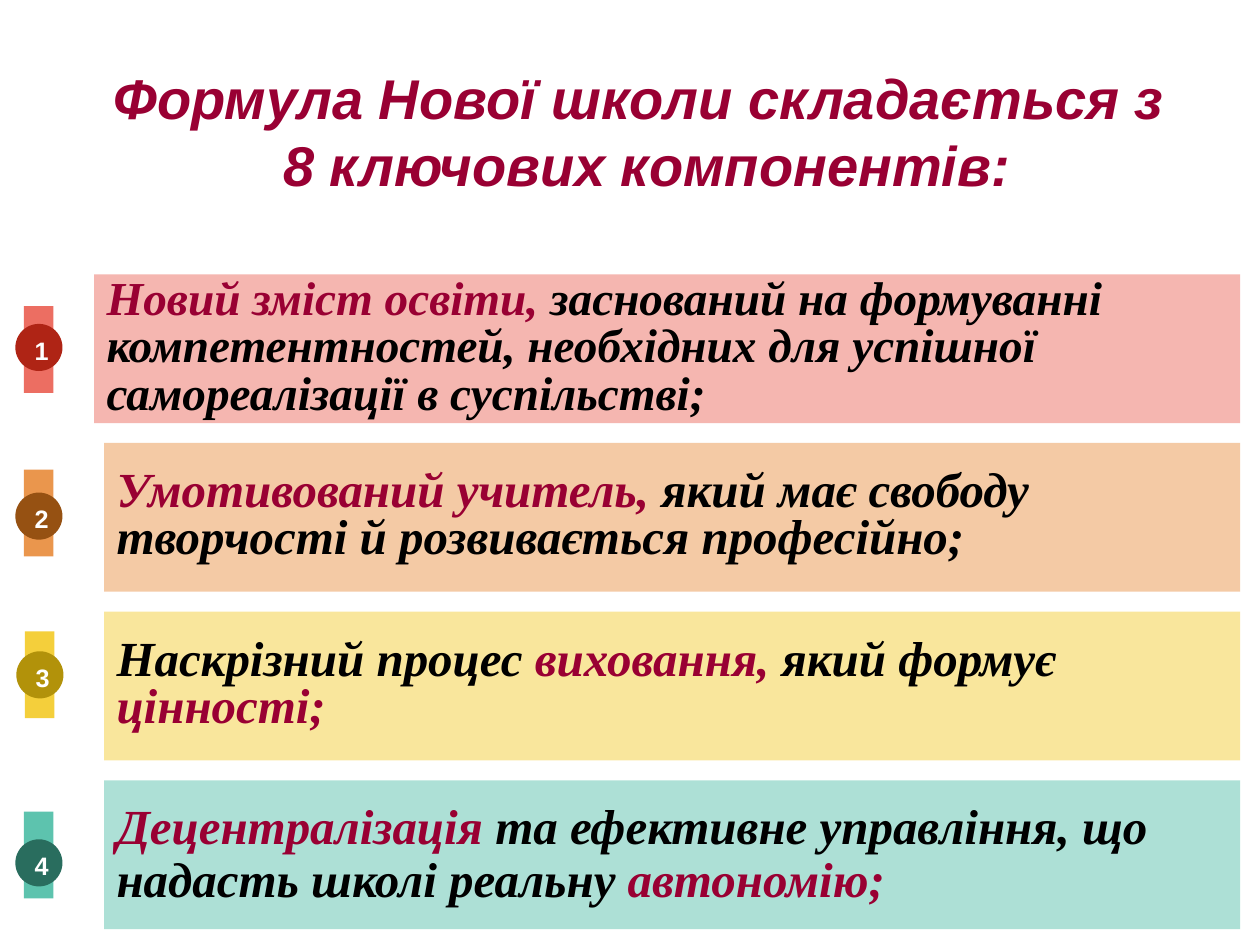
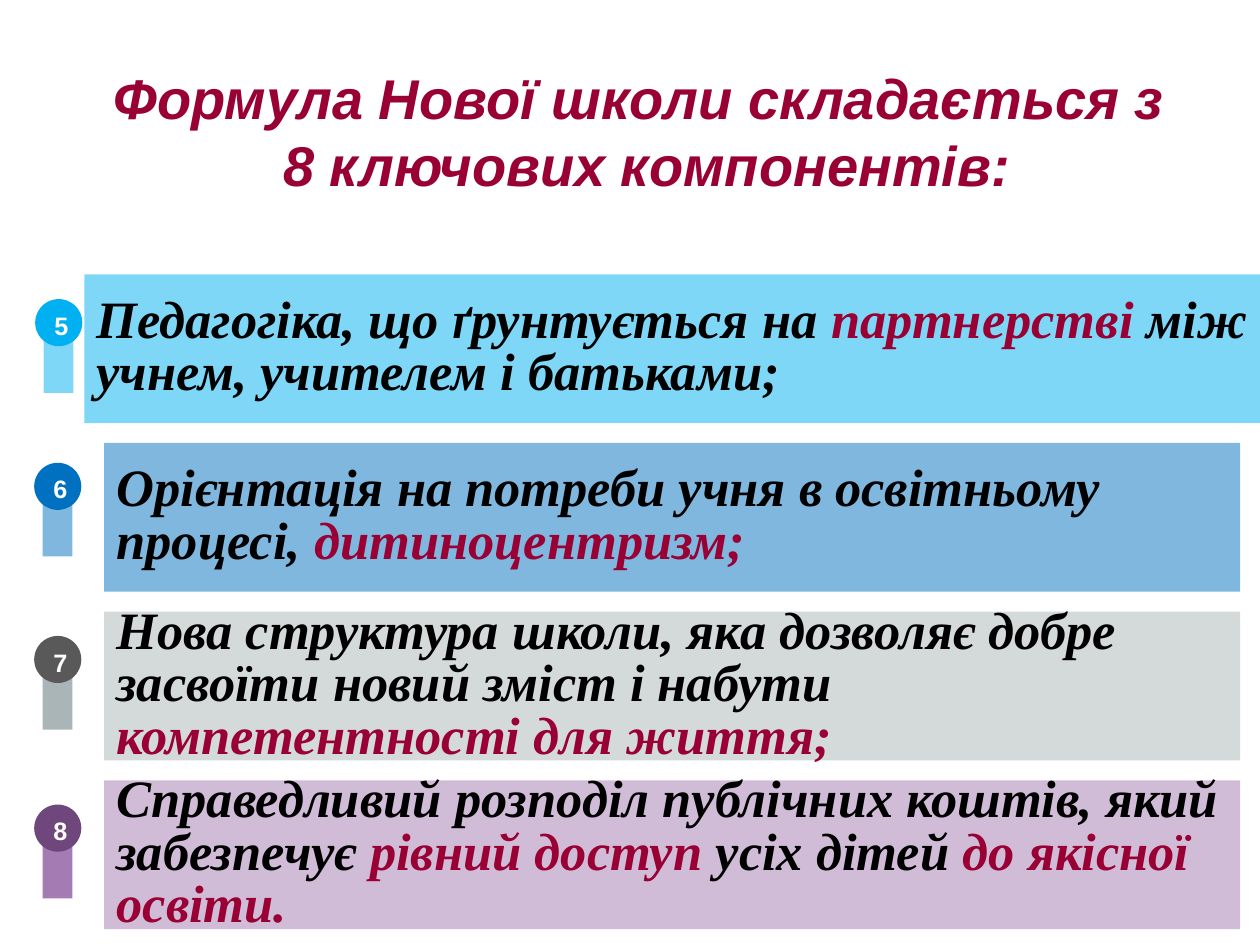
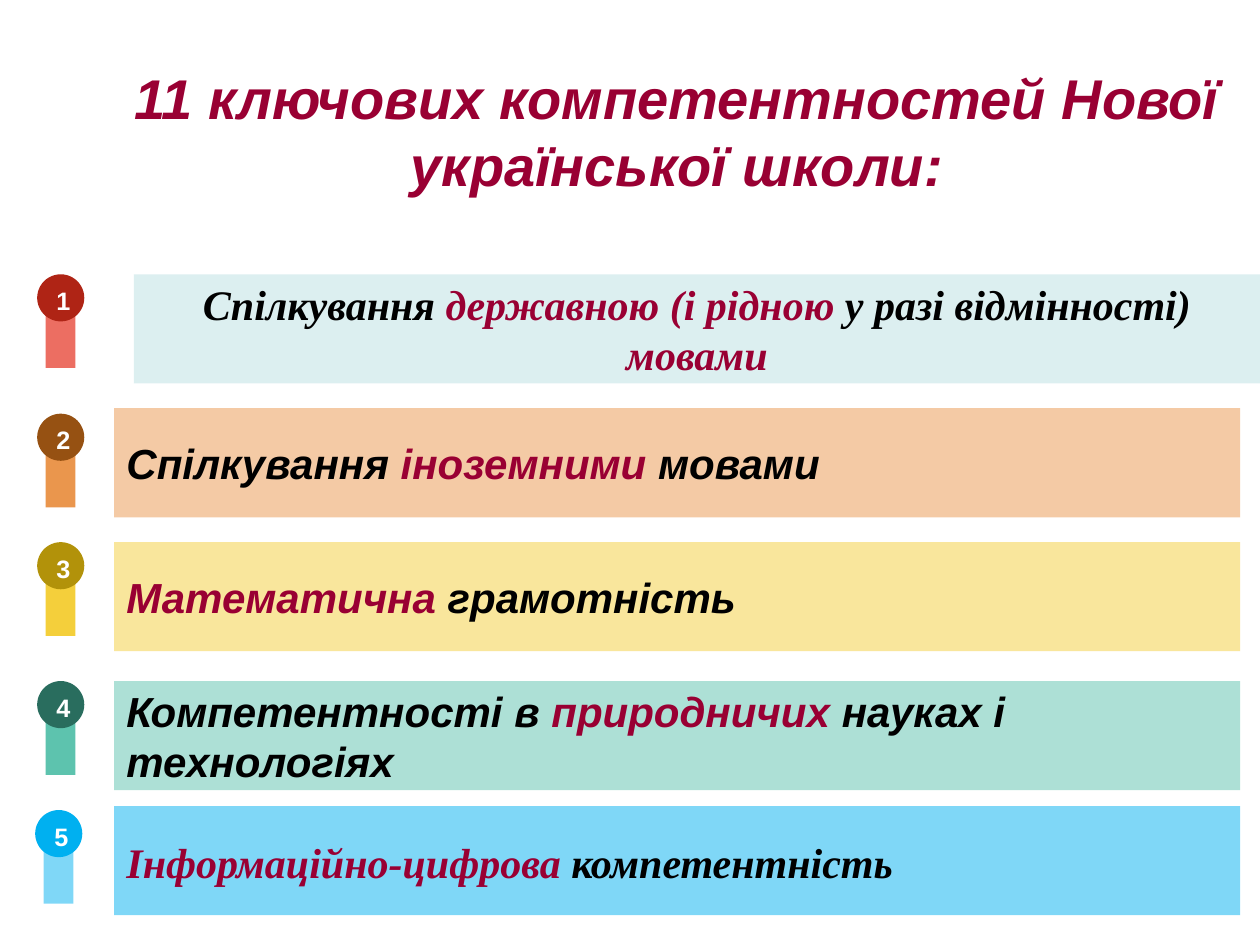
from dataclasses import dataclass

from lxml import etree
from pptx import Presentation
from pptx.dml.color import RGBColor
from pptx.enum.shapes import MSO_SHAPE
from pptx.enum.text import MSO_ANCHOR, PP_ALIGN
from pptx.oxml.ns import qn
from pptx.util import Cm, Pt

RECTANGLE, OVAL = MSO_SHAPE.RECTANGLE, MSO_SHAPE.OVAL
MIDDLE = MSO_ANCHOR.MIDDLE
LEFT, CENTER = PP_ALIGN.LEFT, PP_ALIGN.CENTER


@dataclass(frozen=True)
class Theme:
    accent: str = "990033"
    text: str = "000000"
    badge_text: str = "FFFFFF"
    red: str = "EC6E62"
    dark_red: str = "AF2415"
    orange: str = "EA964D"
    brown: str = "965112"
    yellow: str = "F4CF3B"
    olive: str = "B2920A"
    mint: str = "5DC3AE"
    dark_green: str = "296D5E"
    sky: str = "00B0F0"
    blue: str = "0070C0"
    silver: str = "AAB5B7"
    gray: str = "595959"
    lilac: str = "A47BB3"
    purple: str = "6F477D"
    pale_teal: str = "BBE0E3"
    sans: str = "Arial"
    serif: str = "Times New Roman"
    title_size: int = 32
    badge_size: int = 18


theme = Theme()
SLIDE_WIDTH, BAR_RIGHT = 25.4, 25
STEM_WIDTH, STEM_HEIGHT, BADGE_SIZE = 0.6, 1.75, 0.95


def add_block(slide, preset, left, top, width, height, color, opaque=True):
    block = slide.shapes.add_shape(preset, Cm(left), Cm(top), Cm(width), Cm(height))
    block.shadow.inherit = False
    block.line.fill.background()
    block.fill.solid()
    block.fill.fore_color.rgb = RGBColor.from_string(color)
    if not opaque:
        shade = block.fill._xPr.find(qn("a:solidFill"))[0]
        etree.SubElement(shade, qn("a:alpha")).set("val", "50000")
    block.text_frame.vertical_anchor = MIDDLE
    return block


def write_runs(paragraph, segments, font_name, size, italic=True, align=LEFT):
    paragraph.alignment = align
    for words, color in segments:
        run = paragraph.add_run()
        run.text = words
        run.font.name = font_name
        run.font.size = Pt(size)
        run.font.bold = True
        run.font.italic = italic
        run.font.color.rgb = RGBColor.from_string(color)


formula_title = ["Формула Нової школи складається з ", "8 ключових компонентів:"]
t = theme

# number, phrase with |accented| parts, stem, badge, stem left and top, badge drop, bar left, size, spacing
components_1_4 = [
    ("1", "|Новий зміст освіти, |заснований на формуванні компетентностей, необхідних для успішної самореалізації в суспільстві;",
     t.red, t.dark_red, 0.48, 6.17, 0.36, 1.9, 27, 27),
    ("2", "|Умотивований учитель, |який має свободу творчості й розвивається професійно;",
     t.orange, t.brown, 0.48, 9.47, 0.46, 2.1, 28, 27),
    ("3", "Наскрізний процес |виховання,| який формує |цінності;",
     t.yellow, t.olive, 0.5, 12.73, 0.4, 2.1, 28, 27),
    ("4", "|Децентралізація |та ефективне управління, що надасть школі реальну |автономію;",
     t.mint, t.dark_green, 0.48, 16.36, 0.56, 2.1, 28, 30),
]
components_5_8 = [
    ("5", "Педагогіка, що ґрунтується на |партнерстві |між учнем, учителем і батьками;",
     t.sky, t.sky, 0.88, 6.17, -0.14, 1.7, 30, 30),
    ("6", "Орієнтація на потреби учня в освітньому процесі, |дитиноцентризм;",
     t.blue, t.blue, 0.86, 9.47, -0.14, 2.1, 30, 30),
    ("7", "Нова структура школи, яка дозволяє добре засвоїти новий зміст і набути |компетентності для життя;",
     t.silver, t.gray, 0.86, 12.96, -0.14, 2.1, 30, 30),
    ("8", "Справедливий розподіл публічних коштів, який забезпечує |рівний доступ |усіх дітей |до якісної освіти.",
     t.lilac, t.purple, 0.86, 16.36, -0.14, 2.1, 30, 30),
]
competences = [
    ("1", "Спілкування |державною (і рідною |у разі відмінності) |мовами",
     t.red, t.dark_red, 0.92, 5.67, -0.14, 2.7, 24, None),
    ("2", "Спілкування |іноземними |мовами",
     t.orange, t.brown, 0.92, 8.48, -0.14, 2.3, 24, None),
    ("3", "|Математична |грамотність",
     t.yellow, t.olive, 0.92, 11.07, -0.14, 2.3, 24, None),
    ("4", "Компетентності в |природничих |науках і технологіях",
     t.mint, t.dark_green, 0.92, 13.87, -0.14, 2.3, 24, None),
    ("5", "|Інформаційно-цифрова |компетентність",
     t.sky, t.sky, 0.88, 16.47, -0.14, 2.3, 24, 30),
]
formula_tops = [5.53 + 3.4 * row for row in range(4)]
competence_tops = [5.53, 8.23, 10.93, 13.73, 16.25]
pages = [
    (formula_title, 0.69, components_1_4, formula_tops, 3),
    (formula_title, 0.69, components_5_8, formula_tops, 3),
    (["11 ключових компетентностей Нової української школи:"], 1.9, competences, competence_tops, 2.2),
]

deck = Presentation()
deck.slide_width, deck.slide_height = Cm(SLIDE_WIDTH), Cm(19.05)

for title_lines, title_left, items, bar_tops, bar_height in pages:
    slide = deck.slides.add_slide(deck.slide_layouts[6])
    heading = slide.shapes.add_textbox(Cm(title_left), Cm(0.76), Cm(SLIDE_WIDTH - title_left), Cm(3.76)).text_frame
    heading.word_wrap = True
    heading.vertical_anchor = MIDDLE
    for index, line in enumerate(title_lines):
        paragraph = heading.add_paragraph() if index else heading.paragraphs[0]
        write_runs(paragraph, [(line, theme.accent)], theme.sans, theme.title_size, align=CENTER)

    for item, bar_top in zip(items, bar_tops):
        number, phrase, color, badge_color, stem_left, stem_top, drop, bar_left, size, spacing = item
        full_bleed = bar_left in (1.7, 2.7)
        centered = bar_left == 2.7
        bar_color = theme.pale_teal if centered else color
        bar_right = SLIDE_WIDTH if full_bleed else BAR_RIGHT
        font_name = theme.serif if spacing or centered else theme.sans

        add_block(slide, RECTANGLE, stem_left, stem_top, STEM_WIDTH, STEM_HEIGHT, color,
                  opaque=color not in (theme.sky, theme.blue))
        bar = add_block(slide, RECTANGLE, bar_left, bar_top, bar_right - bar_left, bar_height, bar_color, opaque=False)
        segments = [(words, theme.accent if part % 2 else theme.text)
                    for part, words in enumerate(phrase.split("|")) if words]
        statement = bar.text_frame.paragraphs[0]
        write_runs(statement, segments, font_name, size, align=CENTER if centered else LEFT)
        if spacing:
            statement.line_spacing = Pt(spacing)

        badge = add_block(slide, OVAL, stem_left - 0.17, stem_top + drop, BADGE_SIZE, BADGE_SIZE, badge_color)
        digit = badge.text_frame.paragraphs[0]
        write_runs(digit, [(number, theme.badge_text)], theme.sans, theme.badge_size, italic=False, align=CENTER)
        digit.runs[0].font._element.set("cap", "small")

deck.save("out.pptx")
